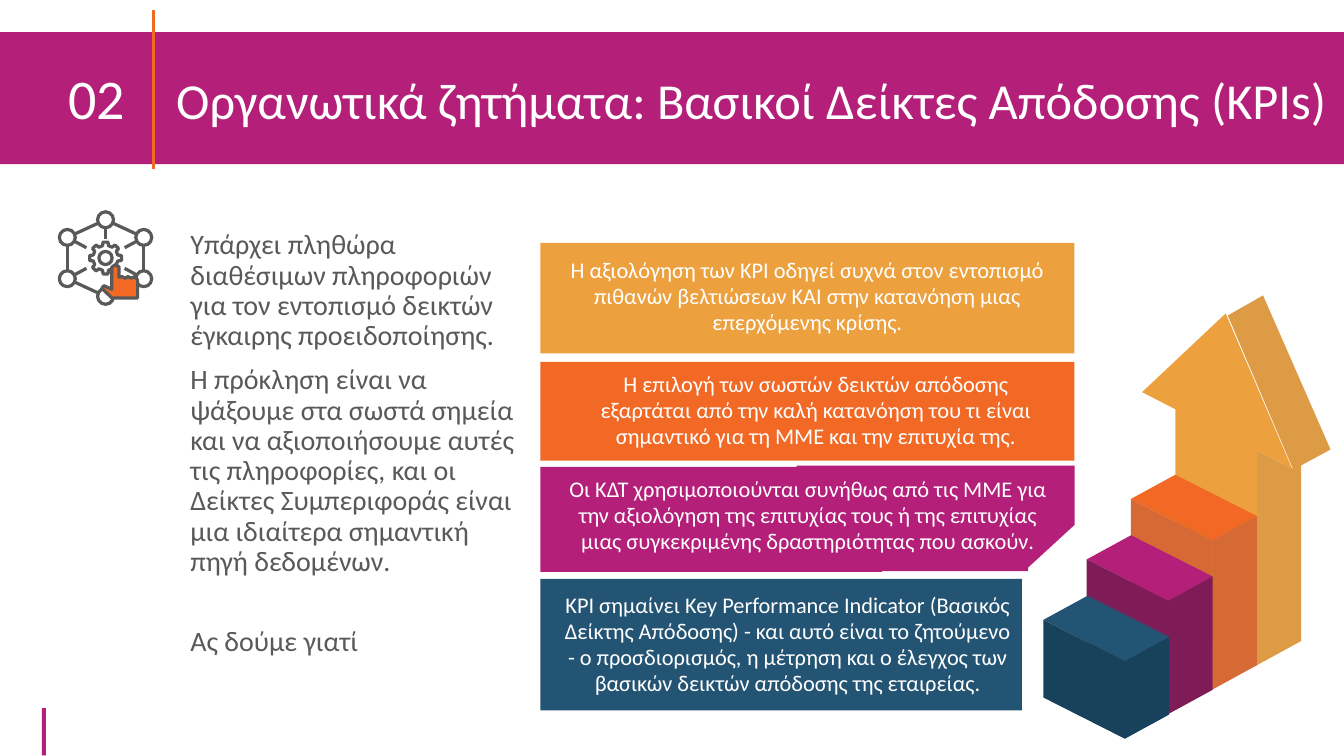
from math import cos, sin, pi

from lxml import etree
from pptx import Presentation
from pptx.dml.color import RGBColor
from pptx.enum.shapes import MSO_CONNECTOR, MSO_SHAPE
from pptx.enum.text import MSO_ANCHOR, PP_ALIGN
from pptx.oxml.ns import qn
from pptx.util import Pt

COLORS = {
    "white": "FFFFFF", "grey": "595959",
    "magenta": "B41F7A", "magenta_side": "7F1C58",
    "orange": "F16924", "orange_side": "D66A35",
    "blue": "245473", "blue_side": "18425B",
    "gold": "EDA13E", "gold_side": "DE9B45",
}
FONT = "Calibri"

NUMBER = "02"
TITLE = "Οργανωτικά ζητήματα: Βασικοί Δείκτες Απόδοσης (KPIs)"
TITLE_TAB = 77

INTRO = [
    ("Υπάρχει πληθώρα διαθέσιμων πληροφοριών για τον εντοπισμό δεικτών έγκαιρης προειδοποίησης.", 0),
    ("Η πρόκληση είναι να ψάξουμε στα σωστά σημεία και να αξιοποιήσουμε αυτές τις πληροφορίες, "
     "και οι Δείκτες Συμπεριφοράς είναι μια ιδιαίτερα σημαντική πηγή δεδομένων.", 10),
    ("Ας δούμε γιατί", 35.5),
]

BANDS = [
    ("orange", (386, 258.5, 381.5, 70.5)),
    ("gold", (386, 173.5, 381.5, 79)),
    ("magenta", (0, 23, 960, 94.3)),
    ("blue", (386, 413.5, 344, 94)),
    ("magenta", (386, 333.5, 244, 75)),
    ("magenta", (29.9, 505.8, 2.9, 33.8)),
]
MAGENTA_NOTCH = [(569, 408), (569, 332.6), (767.5, 332.6), (767.5, 375), (734.4, 405.4), (734.4, 408)]

STEP_NOTES = [
    ("KPI σημαίνει Key Performance Indicator (Βασικός Δείκτης Απόδοσης) - και αυτό είναι το "
     "ζητούμενο - ο προσδιορισμός, η μέτρηση και ο έλεγχος των βασικών δεικτών απόδοσης της εταιρείας.",
     (395.3, 419.8, 334.8, 83.5)),
    ("Οι ΚΔΤ χρησιμοποιούνται συνήθως από τις ΜΜΕ για την αξιολόγηση της επιτυχίας τους ή της "
     "επιτυχίας μιας συγκεκριμένης δραστηριότητας που ασκούν.",
     (395.3, 337, 363.6, 64)),
    ("Η επιλογή των σωστών δεικτών απόδοσης εξαρτάται από την καλή κατανόηση του τι είναι "
     "σημαντικό για τη ΜΜΕ και την επιτυχία της.",
     (406.8, 262, 352, 64)),
    ("Η αξιολόγηση των KPI οδηγεί συχνά στον εντοπισμό πιθανών βελτιώσεων ΚΑΙ στην κατανόηση "
     "μιας επερχόμενης κρίσης.",
     (399.6, 180.7, 354.2, 82.8)),
]

ARROW_FACES = [
    ("gold_side", [(929.5, 457.9), (929.5, 331.2), (923, 334.8), (897.8, 321.8), (897.8, 475.2)]),
    ("gold_side", [(902.2, 211), (877, 225.4), (923.8, 335.5), (950.4, 321.1)]),
    ("gold", [(897.8, 475.2), (897.8, 321.8), (923, 334.8), (875.5, 223.9), (815.8, 280.1),
              (839.5, 292.3), (839.5, 445.7)]),
]
STAIRS = [
    ("orange", (897.8, 368.6), 106.6),
    ("magenta", (866.2, 411.8), 81),
    ("blue", (835.2, 455), 55.4),
]
STAIR_BACK, STAIR_LEFT, STAIR_FRONT = (-58.3, -29.5), (-90, -12.2), (-31.7, 17.3)

HUB = (75.4, 184.3)
NODES = [(75.4, 157), (102.7, 169.6), (102.7, 199.1), (75.4, 211.7), (48.1, 199.1), (48.1, 169.6)]
RIM = [(0, 1), (1, 2), (3, 4), (4, 5), (5, 0)]
SPOKE_NODES = [0, 1, 2, 4, 5]
NODE_RADIUS, HOLE_RADIUS, TEETH = 5.7, 4.7, 8
ICON_STROKE = 2.3
HAND = [(72.7, 205.9), (74.2, 204.1), (79.9, 206.6), (79.9, 190.8), (82.4, 189), (85, 190.8),
        (85, 198), (87.1, 197.6), (89.3, 198.7), (91.4, 197.6), (93.6, 198.7), (96.5, 197.6),
        (98.3, 200.2), (98.3, 212.8), (79.9, 212.8)]

deck = Presentation()
deck.slide_width, deck.slide_height = Pt(960), Pt(540)
slide = deck.slides.add_slide(deck.slide_layouts[6])


def rgb(name):
    return RGBColor.from_string(COLORS[name])


def paint(shape, fill, line=None, width=ICON_STROKE):
    shape.shadow.inherit = False
    shape.fill.solid()
    shape.fill.fore_color.rgb = rgb(fill)
    if line:
        shape.line.color.rgb = rgb(line)
        shape.line.width = Pt(width)
    else:
        shape.line.fill.background()


def preset(kind, box, fill, line=None, width=ICON_STROKE):
    paint(slide.shapes.add_shape(kind, *map(Pt, box)), fill, line, width)


def polygon(points, fill, line=None):
    corners = [(Pt(x), Pt(y)) for x, y in points]
    builder = slide.shapes.build_freeform(*corners[0])
    builder.add_line_segments(corners[1:], close=True)
    paint(builder.convert_to_shape(), fill, line)


def circle(center, radius):
    x, y = center
    preset(MSO_SHAPE.OVAL, (x - radius, y - radius, 2 * radius, 2 * radius), "white", "grey")


def link(start, end):
    connector = slide.shapes.add_connector(MSO_CONNECTOR.STRAIGHT, *map(Pt, start + end))
    connector.line.color.rgb = rgb("grey")
    connector.line.width = Pt(ICON_STROKE)
    etree.SubElement(connector._element.spPr, qn("a:effectLst"))


def text_frame(box, inset=(7.2, 3.6)):
    frame = slide.shapes.add_textbox(*map(Pt, box)).text_frame
    frame.word_wrap = True
    frame.margin_left = frame.margin_right = Pt(inset[0])
    frame.margin_top = frame.margin_bottom = Pt(inset[1])
    return frame


def write(paragraph, words, size, color):
    run = paragraph.add_run()
    run.text = words
    run.font.name, run.font.size = FONT, Pt(size)
    run.font.color.rgb = rgb(color)


def shift(point, offset):
    return point[0] + offset[0], point[1] + offset[1]


for fill, box in BANDS:
    preset(MSO_SHAPE.RECTANGLE, box, fill)
polygon(MAGENTA_NOTCH, "magenta")

heading = text_frame((41.8, 27.4, 918, 90))
heading.vertical_anchor = MSO_ANCHOR.MIDDLE
headline = heading.paragraphs[0]
headline.line_spacing = 0.9
tabs = etree.SubElement(headline._p.get_or_add_pPr(), qn("a:tabLst"))
etree.SubElement(tabs, qn("a:tab"), pos=str(Pt(TITLE_TAB)), algn="l")
write(headline, NUMBER + "\t", 40, "white")
write(headline, TITLE, 36, "white")
preset(MSO_SHAPE.RECTANGLE, (109.1, 7.6, 1.44, 113), "orange", "orange", 1)

intro = text_frame((128.9, 161.3, 248.4, 366.5))
for index, (words, gap) in enumerate(INTRO):
    paragraph = intro.add_paragraph() if index else intro.paragraphs[0]
    paragraph.line_spacing = 0.9
    if gap:
        paragraph.space_before = Pt(gap)
    write(paragraph, words, 20, "grey")

for fill, points in ARROW_FACES:
    polygon(points, fill)
for color, right, height in STAIRS:
    back, left, front = (shift(right, offset) for offset in (STAIR_BACK, STAIR_LEFT, STAIR_FRONT))
    polygon([right, back, left, front], color)
    for edge in (left, right):
        polygon([edge, front, shift(front, (0, height)), shift(edge, (0, height))], color + "_side")

for words, box in STEP_NOTES:
    note = text_frame(box, (6.5, 2.9)).paragraphs[0]
    note.alignment = PP_ALIGN.CENTER
    note.line_spacing = Pt(18.6)
    write(note, words, 16, "white")

for first, second in RIM:
    link(NODES[first], NODES[second])
for index in SPOKE_NODES:
    x, y = NODES[index]
    link((x, y), ((x + HUB[0]) / 2, (y + HUB[1]) / 2))
for node in NODES:
    circle(node, NODE_RADIUS)
gear = []
for tooth in range(TEETH):
    for turn, radius in ((-0.3, 9), (-0.2, 11.5), (0.2, 11.5), (0.3, 9)):
        angle = 2 * pi * (tooth + turn) / TEETH
        gear.append((HUB[0] + radius * cos(angle), HUB[1] + radius * sin(angle)))
polygon(gear, "white", "grey")
circle(HUB, HOLE_RADIUS)
polygon(HAND, "orange", "grey")

deck.save("out.pptx")
